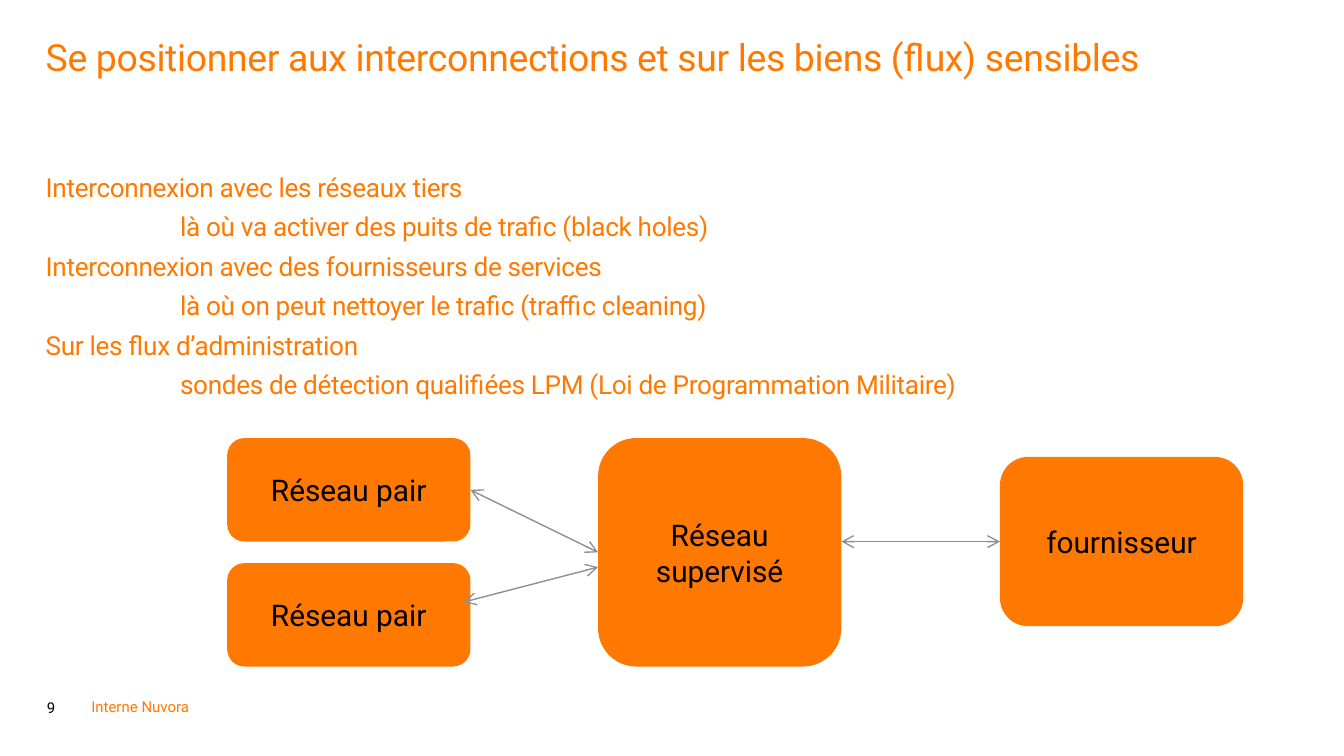
import pptx
import pptx.dml.color
import pptx.enum.shapes
import pptx.enum.text
import pptx.oxml.ns
import pptx.util
from lxml import etree
from pptx.util import Inches

ORANGE, BLACK, GREY = "FF7900", "000000", "8F8F8F"
MARGIN = 0.34
TEXT_WIDTH = 9.31
NODE_WIDTH = 1.81
ANCHOR = pptx.enum.text.MSO_ANCHOR
LEFT_SIDE, RIGHT_SIDE = 1, 3

BODY = [
    ("Interconnexion avec les réseaux tiers",
     "là où va activer des puits de trafic (black holes)"),
    ("Interconnexion avec des fournisseurs de services",
     "là où on peut nettoyer le trafic (traffic cleaning)"),
    ("Sur les flux d’administration",
     "sondes de détection qualifiées LPM (Loi de Programmation Militaire)"),
]


def color(value):
    return pptx.dml.color.RGBColor.from_string(value)


def apply(target, values):
    for name, value in values.items():
        setattr(target, name, value)


def add_span(para, text, size, hue, tracking=None):
    span = para.add_run()
    span.text = text
    apply(span.font, {"name": "Roboto", "size": pptx.util.Pt(size)})
    span.font.color.rgb = color(hue)
    if tracking is not None:
        span.font._element.set("spc", str(round(tracking * 100)))


def add_text(page, left, top, width, height, lines, size, hue, inset=0,
             tracking=None, anchor=ANCHOR.TOP, wrap=True, **spacing):
    """Add a text box; lines are (text, indent in inches) pairs."""
    box = page.shapes.add_textbox(*map(Inches, (left, top, width, height)))
    frame = box.text_frame
    apply(frame, {"margin_left": Inches(inset), "margin_top": 0,
                  "margin_right": 0, "margin_bottom": 0, "word_wrap": wrap,
                  "vertical_anchor": anchor})
    for number, (text, indent) in enumerate(lines):
        para = frame.add_paragraph() if number else frame.paragraphs[0]
        apply(para, spacing)
        if indent:
            para._p.get_or_add_pPr().set("marL", str(Inches(indent)))
        add_span(para, text, size, hue, tracking)


def add_node(page, left, top, height, text):
    node = page.shapes.add_shape(
        pptx.enum.shapes.MSO_SHAPE.ROUNDED_RECTANGLE,
        *map(Inches, (left, top, NODE_WIDTH, height)))
    node.shadow.inherit = False
    node.fill.solid()
    node.fill.fore_color.rgb = color(ORANGE)
    node.line.fill.background()
    apply(node.text_frame, {"word_wrap": True,
                            "vertical_anchor": ANCHOR.MIDDLE})
    para = node.text_frame.paragraphs[0]
    para.alignment = pptx.enum.text.PP_ALIGN.CENTER
    add_span(para, text, 16, BLACK)
    return node


def add_arrow(page, start, end, source=None, target=None):
    """Add a double arrow, joined to the source and target nodes if given."""
    arrow = page.shapes.add_connector(
        pptx.enum.shapes.MSO_CONNECTOR.STRAIGHT, *map(Inches, start + end))
    if source is not None:
        arrow.begin_connect(source, RIGHT_SIDE)
    if target is not None:
        arrow.end_connect(target, LEFT_SIDE)
    arrow.line.color.rgb = color(GREY)
    arrow.line.width = pptx.util.Pt(0.75)
    qn = pptx.oxml.ns.qn
    for tag in ("a:headEnd", "a:tailEnd"):
        etree.SubElement(arrow.line._get_or_add_ln(), qn(tag), type="arrow")
    etree.SubElement(arrow._element.spPr, qn("a:effectLst"))


def main():
    deck = pptx.Presentation()
    # Widescreen, 16:9
    apply(deck, {"slide_width": Inches(10),
                 "slide_height": Inches(10) * 9 // 16})
    page = deck.slides.add_slide(deck.slide_layouts[6])

    # Footer
    add_text(page, MARGIN, 4.96, 0.3, 0.37, [("9", 0)], 8, BLACK, inset=0.01,
             anchor=ANCHOR.BOTTOM, line_spacing=0.85,
             space_after=pptx.util.Pt(12))
    add_text(page, 0.68, 5.19, 0.81, 0.13, [("Interne Nuvora", 0)], 8, ORANGE,
             wrap=False)

    # Title and body
    title = "Se positionner aux interconnections et sur les biens (flux) sensibles"
    add_text(page, MARGIN, 0.29, TEXT_WIDTH, 0.81, [(title, 0)], 20, ORANGE,
             tracking=-0.2, line_spacing=0.9)
    lines = [(text, indent) for pair in BODY
             for text, indent in zip(pair, (0, 1))]
    add_text(page, MARGIN, 1.3, TEXT_WIDTH, 3.68, lines, 14, ORANGE,
             tracking=-0.2, line_spacing=0.9, space_before=pptx.util.Pt(6))

    # Networks
    upper_peer = add_node(page, 1.69, 3.26, 0.77, "Réseau pair")
    supplier = add_node(page, 7.44, 3.4, 1.26, "fournisseur")
    supervised = add_node(page, 4.45, 3.26, 1.7, "Réseau supervisé")
    add_node(page, 1.69, 4.19, 0.77, "Réseau pair")

    # Traffic between the networks
    add_arrow(page, (3.5, 3.64), (4.45, 4.11), upper_peer, supervised)
    add_arrow(page, (3.45, 4.48), (4.45, 4.22))
    add_arrow(page, (6.26, 4.03), (7.44, 4.03), target=supplier)

    deck.save("out.pptx")


if __name__ == "__main__":
    main()
